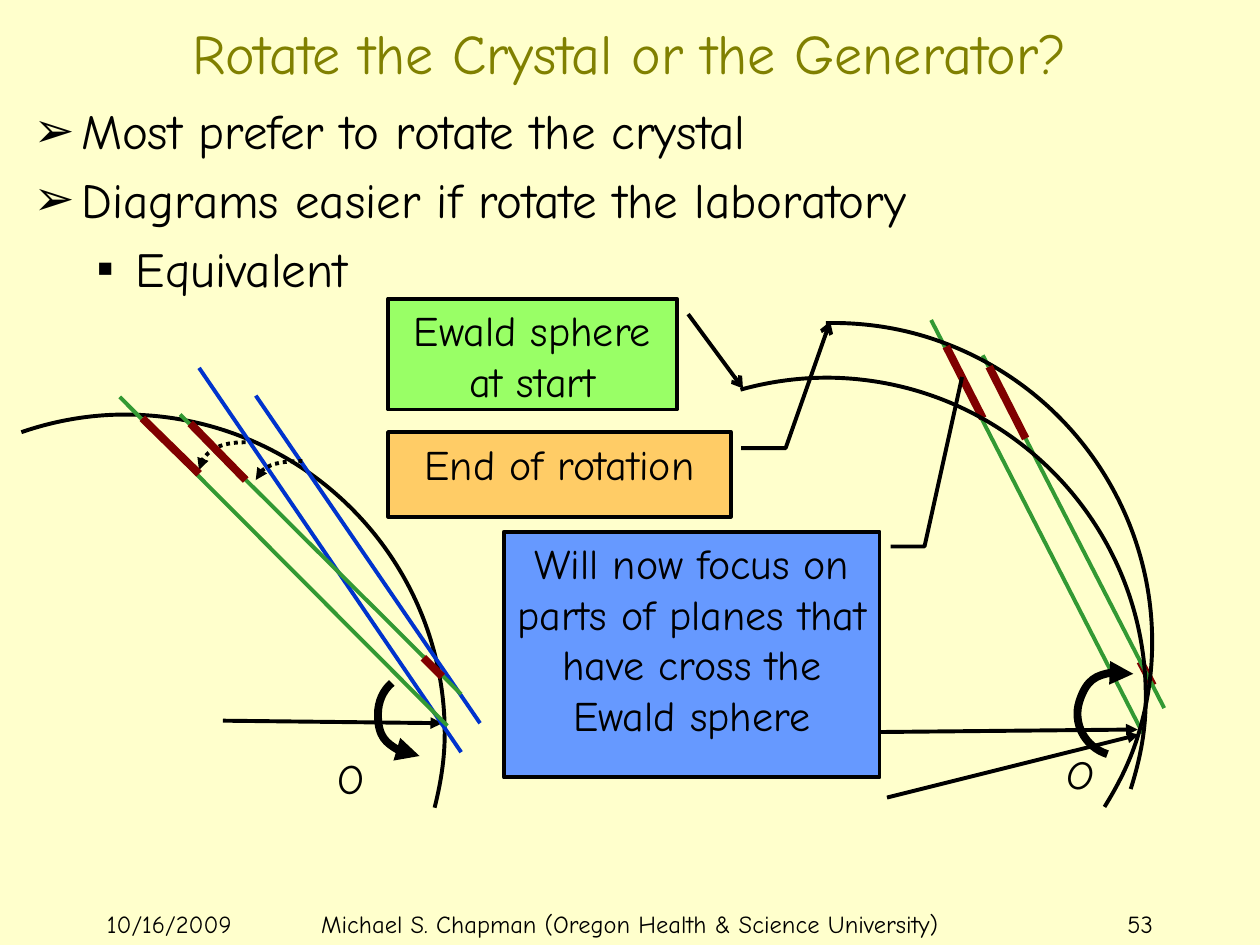
from dataclasses import dataclass
from lxml.etree import SubElement
from pptx import Presentation
from pptx.dml.color import RGBColor
from pptx.enum.dml import MSO_LINE
from pptx.enum.shapes import MSO_CONNECTOR, MSO_SHAPE
from pptx.enum.text import MSO_ANCHOR, MSO_AUTO_SIZE, PP_ALIGN
from pptx.oxml.ns import qn
from pptx.util import Inches, Pt


@dataclass(frozen=True)
class Theme:
    font: str = "Comic Neue"
    background: str = "FFFFCC"
    title: str = "808000"
    ink: str = "000000"
    start_plane: str = "0033CC"
    end_plane: str = "339933"
    crossing: str = "800000"
    start_label: str = "99FF66"
    end_label: str = "FFCC66"
    focus_label: str = "6699FF"
    title_size: int = 32
    body_size: int = 28
    label_size: int = 24
    footer_size: int = 14
    thin: float = 2.25
    thick: float = 4.5


theme = Theme()


def add_text(paragraph, text, size, color=theme.ink, align=PP_ALIGN.LEFT):
    paragraph.alignment = align
    run = paragraph.add_run()
    run.text = text
    run.font.name = theme.font
    run.font.size = Pt(size)
    run.font.color.rgb = RGBColor.from_string(color)


def style_line(shape, color, width, end=None, arrow="triangle", dash=None):
    shape.line.color.rgb = RGBColor.from_string(color)
    shape.line.width = Pt(width)
    if dash:
        shape.line.dash_style = dash
    if end:
        SubElement(shape.line._get_or_add_ln(), qn(f"a:{end}"), type=arrow)
    SubElement(shape._element.spPr, qn("a:effectLst"))


presentation = Presentation()
presentation.slide_width = Inches(10)
presentation.slide_height = Inches(7.5)
slide = presentation.slides.add_slide(presentation.slide_layouts[1])
slide.background.fill.solid()
slide.background.fill.fore_color.rgb = RGBColor.from_string(theme.background)
shapes = slide.shapes

footers = [
    ("10/16/2009", 0.75, 1.42, PP_ALIGN.LEFT),
    ("Michael S. Chapman (Oregon Health & Science University)", 2.25, 5.5, PP_ALIGN.CENTER),
    ("53", 7.92, 1.33, PP_ALIGN.RIGHT),
]
for text, left, width, align in footers:
    footer = shapes.add_textbox(Inches(left), Inches(7 + 1 / 6), Inches(width), Inches(1 / 6))
    footer.text_frame.word_wrap = True
    add_text(footer.text_frame.paragraphs[0], text, theme.footer_size, align=align)

title = shapes.title
title.left, title.top, title.width, title.height = map(Inches, (0, 1 / 6, 10, 0.5))
title.text_frame.auto_size = MSO_AUTO_SIZE.NONE
title.text_frame.vertical_anchor = MSO_ANCHOR.MIDDLE
add_text(title.text_frame.paragraphs[0], "Rotate the Crystal or the Generator?",
         theme.title_size, theme.title, PP_ALIGN.CENTER)

body = slide.placeholders[1]
body.left, body.top, body.width, body.height = map(Inches, (1 / 6, 0.75, 9.67, 1.92))
body.text_frame.auto_size = MSO_AUTO_SIZE.NONE
bullets = [
    ("Most prefer to rotate the crystal", 0, "➢", 0.38, 0.38),
    ("Diagrams easier if rotate the laboratory", 0, "➢", 0.38, 0.38),
    ("Equivalent", 1, "▪", 0.81, 0.31),
]
for index, (text, level, bullet, margin, hanging) in enumerate(bullets):
    frame = body.text_frame
    paragraph = frame.add_paragraph() if index else frame.paragraphs[0]
    paragraph.level = level
    add_text(paragraph, text, theme.body_size)
    paragraph.space_before = Pt(5.6)
    properties = paragraph._p.get_or_add_pPr()
    properties.set("marL", str(Inches(margin)))
    properties.set("indent", str(-Inches(hanging)))
    SubElement(properties, qn("a:buChar"), char=bullet)

sphere = [(0, 0.14), (0.26, 0.05), (0.54, 0), (0.82, 0), (2.22, 0), (3.36, 1.13),
          (3.36, 2.53), (3.36, 2.73), (3.33, 2.92), (3.28, 3.12)]
outer_shift = [(0.37, 0), (0.16, 0), (0, 0.07), (0, 0.15)]
inner_shift = [(0.37, 0), (0.17, 0), (0, 0.1), (0, 0.22)]
left_turn = [(0.33, 0.58), (0.15, 0.58), (0, 0.43), (0, 0.25), (0, 0.15), (0.04, 0.06), (0.11, 0)]
right_turn = [(0.34, 0.67), (0.15, 0.67), (0, 0.52), (0, 0.34), (0, 0.15), (0.15, 0), (0.34, 0)]

solid = (theme.ink, theme.thin)
beam = (theme.ink, theme.thin, "tailEnd")
dotted = (theme.ink, theme.thin, "tailEnd", "triangle", MSO_LINE.ROUND_DOT)
start_plane = (theme.start_plane, theme.thin)
end_plane = (theme.end_plane, theme.thin)
crossing = (theme.crossing, theme.thick)
strokes = [
    (sphere, (0.17, 3.29, 0), solid),
    (None, (1.77, 5.72, 3.51, 5.74), beam),
    (None, (3.81, 5.74, 2.03, 3.14), start_plane),
    (None, (3.66, 5.97, 1.58, 2.92), start_plane),
    (None, (3.66, 5.51, 1.43, 3.29), end_plane),
    (None, (3.55, 5.76, 0.95, 3.15), end_plane),
    (outer_shift, (2.03, 3.66, 0), dotted),
    (inner_shift, (1.58, 3.51, 0), dotted),
    (None, (1.95, 3.81, 1.51, 3.36), crossing),
    (None, (1.58, 3.76, 1.13, 3.32), crossing),
    (None, (3.51, 5.37, 3.36, 5.22), crossing),
    (left_turn, (3, 5.42, 0), (theme.ink, theme.thick, "headEnd")),
    (None, (9.15, 5.44, 9.05, 5.25), crossing),
    (None, (9.24, 5.62, 7.8, 2.82), end_plane),
    (None, (9.07, 5.82, 7.39, 2.54), end_plane),
    (sphere, (6.04, 2.87, 17.8), solid),
    (None, (6.97, 5.81, 9.03, 5.79), beam),
    (None, (8.14, 3.48, 7.85, 2.91), crossing),
    (None, (7.8, 3.32, 7.51, 2.75), crossing),
    (right_turn, (8.56, 5.28, 17.8), (theme.ink, theme.thick, "tailEnd")),
    (sphere, (5.79, 3.05, 3.4), solid),
    (None, (7.04, 6.33, 9.04, 5.83), beam),
]
for points, place, style in strokes:
    if points is None:
        stroke = shapes.add_connector(MSO_CONNECTOR.STRAIGHT, *map(Inches, place))
    else:
        start, *controls = [(Inches(x), Inches(y)) for x, y in points]
        builder = shapes.build_freeform(*start)
        builder.add_line_segments(controls, close=False)
        stroke = builder.convert_to_shape()
        stroke.left, stroke.top = Inches(place[0]), Inches(place[1])
        stroke.rotation = place[2]
        stroke.fill.background()
        segments = list(stroke._element.iter(qn("a:lnTo")))
        outline = segments[0].getparent()
        for first in range(0, len(segments), 3):
            bezier = SubElement(outline, qn("a:cubicBezTo"))
            for segment in segments[first:first + 3]:
                bezier.append(segment[0])
                outline.remove(segment)
    style_line(stroke, *style)

for left, rotation in ((2.58, 0), (8.37, 17.8)):
    origin = shapes.add_textbox(Inches(left), Inches(5.92), Inches(0.58), Inches(0.5))
    origin.rotation = rotation
    origin.text_frame.word_wrap = True
    add_text(origin.text_frame.paragraphs[0], "O", theme.label_size)

callouts = [
    ("Ewald sphere at start", MSO_SHAPE.LINE_CALLOUT_1, (3.08, 2.37, 2.29, 0.88),
     (0.14, 1.04, 0.81, 1.23), theme.start_label, "tailEnd"),
    ("End of rotation", MSO_SHAPE.LINE_CALLOUT_2, (3.08, 3.43, 2.72, 0.67),
     (0.19, 1.03, 0.19, 1.16, -1.31, 1.29), theme.end_label, "tailEnd"),
    ("Will now focus on parts of planes that have cross the Ewald sphere",
     MSO_SHAPE.LINE_CALLOUT_2, (4, 4.22, 2.98, 1.95),
     (0.06, 1.03, 0.06, 1.12, -0.63, 1.22), theme.focus_label, None),
]
for text, kind, box, adjustments, fill, end in callouts:
    callout = shapes.add_shape(kind, *map(Inches, box))
    for index, value in enumerate(adjustments):
        callout.adjustments[index] = value
    callout.fill.solid()
    callout.fill.fore_color.rgb = RGBColor.from_string(fill)
    style_line(callout, theme.ink, theme.thin, end, "arrow")
    callout.text_frame.word_wrap = True
    callout.text_frame.vertical_anchor = MSO_ANCHOR.TOP
    add_text(callout.text_frame.paragraphs[0], text, theme.label_size, align=PP_ALIGN.CENTER)

presentation.save("out.pptx")
